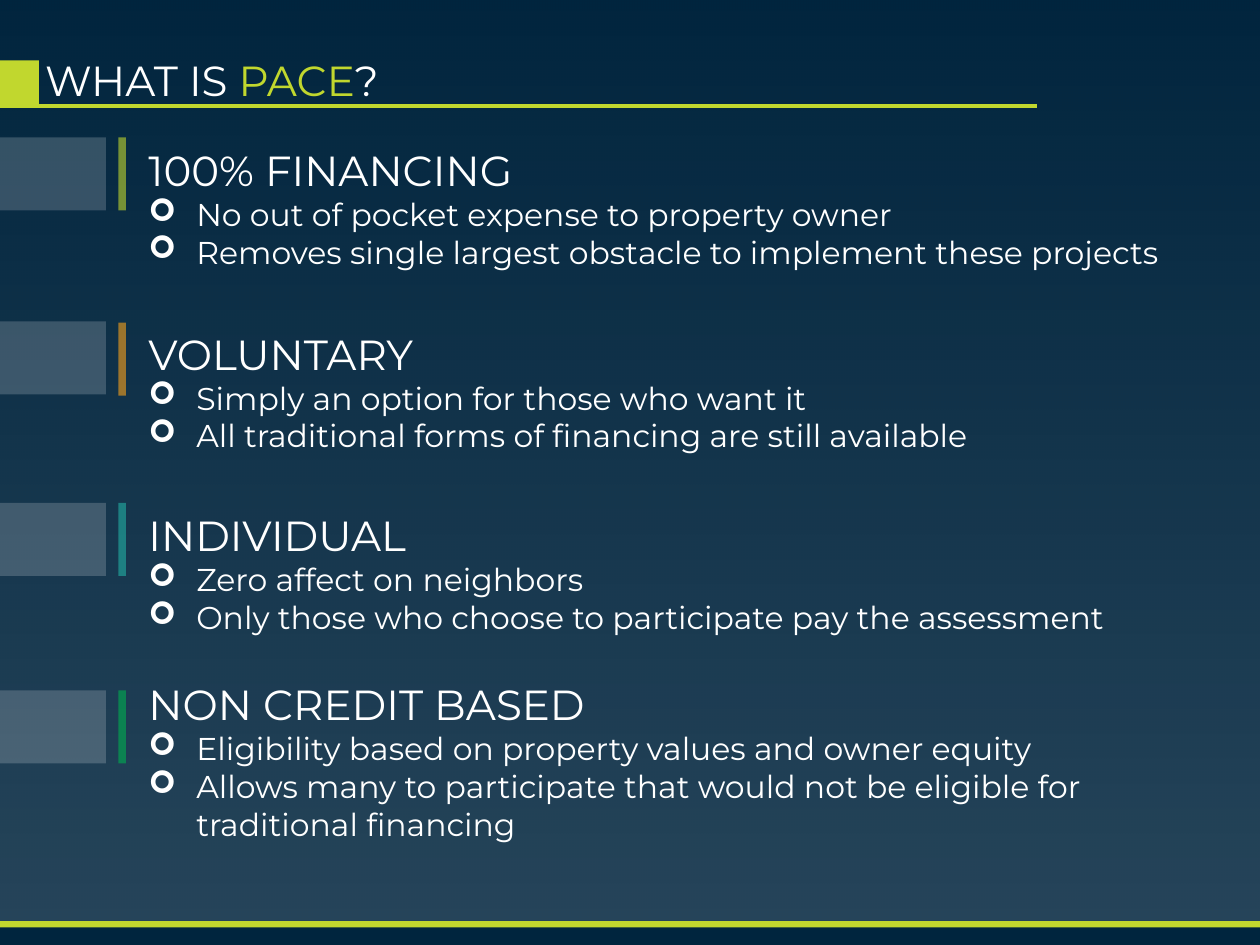
import lxml.etree
import pptx
import pptx.dml.color
import pptx.enum.dml
import pptx.enum.shapes
import pptx.enum.text
import pptx.oxml.ns
import pptx.util

Inches = pptx.util.Inches
Pt = pptx.util.Pt
qn = pptx.oxml.ns.qn
ANCHOR = pptx.enum.text.MSO_ANCHOR

COLORS = {
    "navy": "00253E",
    "lime": "C1D72E",
    "orange": "FAA21B",
    "teal": "23B1A5",
    "green": "00B050",
    "white": "FFFFFF",
}
HEADING = {"size": Pt(24), "name": "Montserrat"}
BODY = {"size": Pt(18), "name": "Montserrat"}
INDENT = Inches(0.38)

SECTIONS = [
    (1.09, 1.09, "lime", "100% FINANCING", [
        "No out of pocket expense to property owner",
        "Removes single largest obstacle to implement these projects",
    ]),
    (2.55, 2.56, "orange", "VOLUNTARY", [
        "Simply an option for those who want it",
        "All traditional forms of financing are still available",
    ]),
    (3.99, 3.99, "teal", "INDIVIDUAL", [
        "Zero affect on neighbors",
        "Only those who choose to participate pay the assessment",
    ]),
    (5.48, 5.48, "green", "NON CREDIT BASED", [
        "Eligibility based on property values and owner equity",
        "Allows many to participate that would not be eligible for traditional financing",
    ]),
]


class SlideBuilder:
    """Hold the style and the current slide, and add each kind of element."""

    def __init__(self, slide):
        self.slide = slide

    def rgb(self, color):
        return pptx.dml.color.RGBColor.from_string(COLORS[color])

    def set_alpha(self, color_element, percent):
        alpha = lxml.etree.SubElement(color_element, qn("a:alpha"))
        alpha.set("val", str(percent * 1000))

    def rectangle(self, left, top, width, height, color, opacity=100):
        shape = self.slide.shapes.add_shape(
            pptx.enum.shapes.MSO_SHAPE.RECTANGLE,
            Inches(left), Inches(top), Inches(width), Inches(height))
        shape.shadow.inherit = False
        shape.line.fill.background()
        shape.fill.solid()
        shape.fill.fore_color.rgb = self.rgb(color)
        if opacity < 100:
            self.set_alpha(next(shape._element.spPr.iter(qn("a:srgbClr"))), opacity)
        return shape

    def backdrop(self, color, opacity):
        shape = self.rectangle(0, 0, 10, 7.5, color)
        shape.fill.gradient()
        shape.fill.gradient_angle = 90
        for stop in shape.fill.gradient_stops:
            stop.color.rgb = self.rgb(color)
        self.set_alpha(next(shape._element.spPr.iter(qn("a:srgbClr"))), opacity)

    def rule(self, left, top, right, color, width):
        connector = self.slide.shapes.add_connector(
            pptx.enum.shapes.MSO_CONNECTOR.STRAIGHT,
            Inches(left), Inches(top), Inches(right), Inches(top))
        connector.line.color.rgb = self.rgb(color)
        connector.line.width = Pt(width)
        lxml.etree.SubElement(connector._element.spPr, qn("a:effectLst"))

    def text_frame(self, left, top, width, height, frame_format):
        box = self.slide.shapes.add_textbox(
            Inches(left), Inches(top), Inches(width), Inches(height))
        for name, value in {"word_wrap": True, **frame_format}.items():
            setattr(box.text_frame, name, value)
        return box.text_frame

    def run(self, paragraph, text, font_format, color="white"):
        run = paragraph.add_run()
        run.text = text
        for name, value in font_format.items():
            setattr(run.font, name, value)
        run.font.color.rgb = self.rgb(color)

    def bullet(self, paragraph):
        properties = paragraph._p.get_or_add_pPr()
        properties.set("marL", str(INDENT))
        properties.set("indent", str(-INDENT))
        font = lxml.etree.SubElement(properties, qn("a:buFont"))
        font.set("typeface", "Wingdings")
        character = lxml.etree.SubElement(properties, qn("a:buChar"))
        character.set("char", "➢")

    def title(self, parts):
        frame = self.text_frame(0.26, 0.1, 7.98, 0.78,
                                {"vertical_anchor": ANCHOR.BOTTOM})
        paragraph = frame.paragraphs[0]
        paragraph.line_spacing = 1.2
        for text, color in parts:
            self.run(paragraph, text, HEADING, color)

    def section(self, top, bar_top, color, heading, points):
        self.rectangle(0, top, 0.84, 0.58, "white", 19)
        self.rectangle(0.94, bar_top, 0.06, 0.58, color, 60)
        frame = self.text_frame(1.08, top, 8.92, 1.11, {
            "vertical_anchor": ANCHOR.MIDDLE,
            "auto_size": pptx.enum.text.MSO_AUTO_SIZE.SHAPE_TO_FIT_TEXT,
        })
        self.run(frame.paragraphs[0], heading, HEADING)
        for point in points:
            paragraph = frame.add_paragraph()
            self.bullet(paragraph)
            self.run(paragraph, point, BODY)


def main():
    presentation = pptx.Presentation()
    presentation.slide_width = Inches(10)
    presentation.slide_height = Inches(7.5)
    slide = presentation.slides.add_slide(presentation.slide_layouts[6])
    builder = SlideBuilder(slide)
    builder.backdrop("navy", 85)
    builder.rule(0, 0.84, 8.23, "lime", 2.25)
    builder.rectangle(0, 7.34, 10, 0.16, "navy")
    builder.rectangle(0, 7.31, 10, 0.05, "lime")
    builder.rectangle(0, 0.48, 0.31, 0.37, "lime")
    builder.title([("WHAT IS ", "white"), ("PACE", "lime"), ("?", "white")])
    for section in SECTIONS:
        builder.section(*section)
    presentation.save("out.pptx")


if __name__ == "__main__":
    main()
